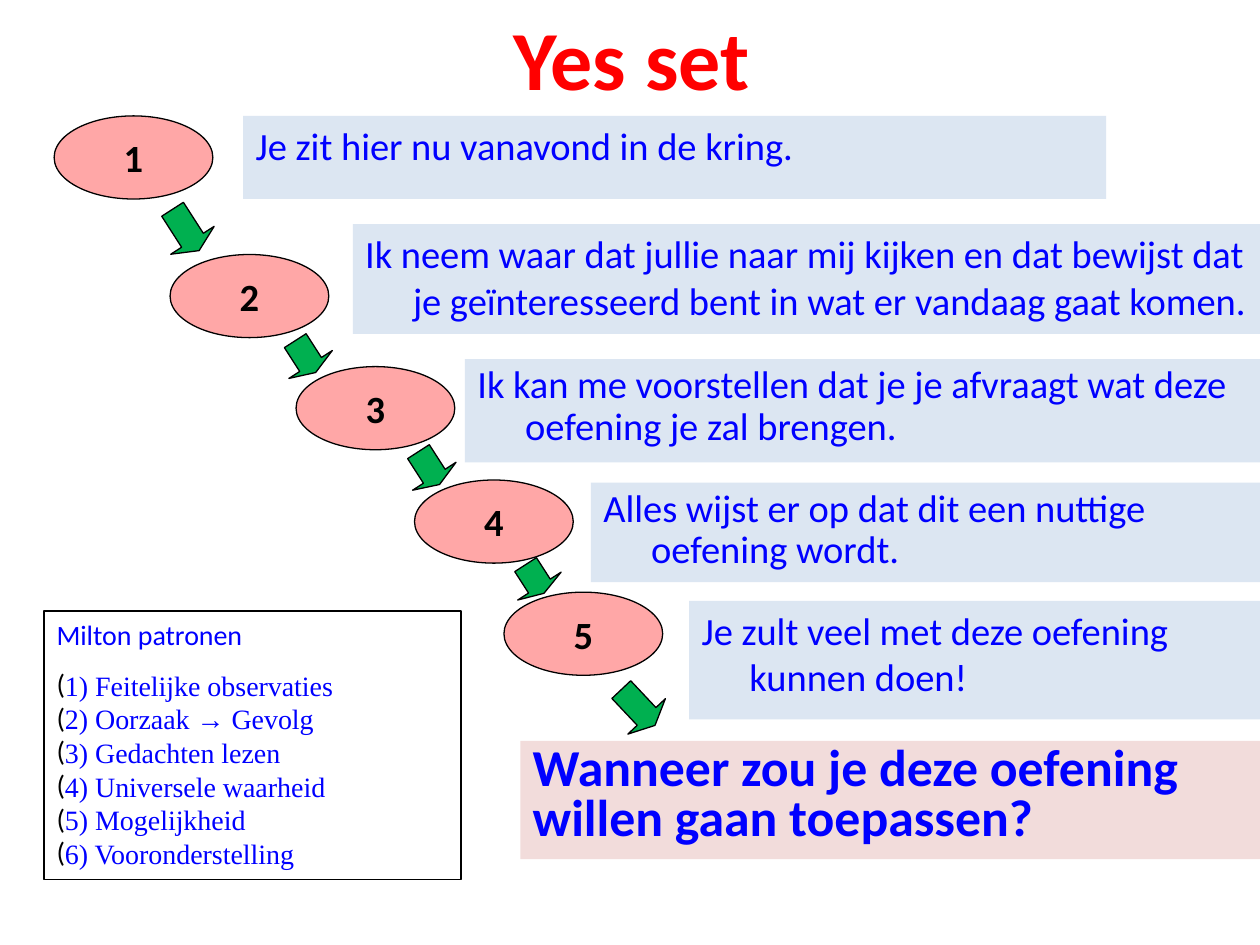
"""Build the "Yes set" slide: five numbered steps leading to a closing question."""
import pptx
import pptx.dml.color
import pptx.enum.shapes
import pptx.enum.text
import pptx.oxml.ns
import pptx.util
import lxml.etree
from pptx.util import Inches

COLORS = {
    "blue": "0000FF", "red": "FF0000", "black": "000000", "white": "FFFFFF",
    "pink": "FFA7A7", "green": "00B050", "pale_blue": "DCE6F2", "pale_red": "F2DCDB",
}
SHAPES = pptx.enum.shapes.MSO_SHAPE
ANCHOR = pptx.enum.text.MSO_ANCHOR
CENTER = pptx.enum.text.PP_ALIGN.CENTER


def add_box(kind, place, fill, outlined=False, turn=0):
    box = page.shapes.add_shape(kind, *[Inches(length) for length in place])
    box.shadow.inherit = False
    box.rotation = turn
    box.fill.solid()
    box.fill.fore_color.rgb = pptx.dml.color.RGBColor.from_string(COLORS[fill])
    if outlined:
        box.line.color.rgb = pptx.dml.color.RGBColor.from_string(COLORS["black"])
        box.line.width = pptx.util.Pt(0.75)
    else:
        box.line.fill.background()
    box.text_frame.word_wrap = True
    box.text_frame.vertical_anchor = ANCHOR.TOP
    return box


def write(para, text, size, color="blue", bold=False, font="Calibri", **layout):
    span = para.add_run()
    span.text = text
    formats = {"name": font, "size": pptx.util.Pt(size), "bold": bold}
    for name, value in formats.items():
        setattr(span.font, name, value)
    span.font.color.rgb = pptx.dml.color.RGBColor.from_string(COLORS[color])
    for name, value in ({"alignment": pptx.enum.text.PP_ALIGN.LEFT} | layout).items():
        setattr(para, name, value)


deck = pptx.Presentation()
deck.slide_width, deck.slide_height = Inches(10), Inches(7.5)
page = deck.slides.add_slide(deck.slide_layouts[6])

steps = [
    ((0.43, 0.92), (1.93, 0.92, 6.85, 0.66), 1.0, "Je zit hier nu vanavond in de kring."),
    ((1.35, 2.02), (2.8, 1.78, 7.2, 0.87), 1.0,
     "Ik neem waar dat jullie naar mij kijken en dat bewijst dat "
     "je geïnteresseerd bent in wat er vandaag gaat komen."),
    ((2.35, 2.91), (3.69, 2.85, 6.31, 0.82), 0.9,
     "Ik kan me voorstellen dat je je afvraagt wat deze oefening je zal brengen."),
    ((3.29, 3.81), (4.69, 3.83, 5.31, 0.79), 0.9,
     "Alles wijst er op dat dit een nuttige oefening wordt."),
    ((4, 4.7), (5.47, 4.77, 4.53, 0.94), 1.0,
     "Je zult veel met deze oefening kunnen doen!"),
]
for number, (corner, place, spacing, sentence) in enumerate(steps, 1):
    panel = add_box(SHAPES.RECTANGLE, place, "pale_blue")
    para = panel.text_frame.paragraphs[0]
    write(para, sentence, 22, line_spacing=spacing, space_before=pptx.util.Pt(4.4))
    properties = para._p.get_or_add_pPr()
    properties.set("marL", str(Inches(0.38)))
    properties.set("indent", str(-Inches(0.38)))
    oval = add_box(SHAPES.OVAL, (*corner, 1.26, 0.66), "pink", outlined=True)
    oval.text_frame.vertical_anchor = ANCHOR.MIDDLE
    write(oval.text_frame.paragraphs[0], str(number), 22, "black", True,
          alignment=CENTER, space_after=pptx.util.Pt(10))

arrows = [
    (1.27, 1.63, 0.39, 327.3), (2.22, 2.68, 0.3, 327.3), (3.2, 3.56, 0.31, 327.3),
    (4.04, 4.46, 0.27, 327.3), (4.86, 5.42, 0.39, 316.7),
]
for left, top, height, turn in arrows:
    arrow = add_box(SHAPES.DOWN_ARROW, (left, top, 0.41, height), "green", True, turn)
    arrow.adjustments[0], arrow.adjustments[1] = 0.5, 0.25

question = add_box(SHAPES.RECTANGLE, (4.13, 5.88, 5.87, 0.94), "pale_red")
write(question.text_frame.paragraphs[0], "Wanneer zou je deze oefening willen gaan toepassen?",
      29.6, bold=True, line_spacing=0.8, space_before=pptx.util.Pt(5.9))

title = page.shapes.add_textbox(Inches(3.98), Inches(0), Inches(2.09), Inches(0.91))
title.text_frame.word_wrap = False
write(title.text_frame.paragraphs[0], "Yes set", 48, "red", True)

legend = add_box(SHAPES.RECTANGLE, (0.35, 4.85, 3.31, 2.13), "white", outlined=True)
write(legend.text_frame.paragraphs[0], "Milton patronen", 16, space_after=pptx.util.Pt(10))
patterns = [
    "Feitelijke observaties", "Oorzaak → Gevolg", "Gedachten lezen",
    "Universele waarheid", "Mogelijkheid", "Vooronderstelling",
]
tag = pptx.oxml.ns.qn
for number, pattern in enumerate(patterns, 1):
    para = legend.text_frame.add_paragraph()
    write(para, f"{number}) {pattern}", 16, font="Times New Roman", level=1)
    properties = para._p.get_or_add_pPr()
    properties.set("marL", "0")
    properties.set("indent", "0")
    color = lxml.etree.SubElement(properties, tag("a:buClr"))
    lxml.etree.SubElement(color, tag("a:srgbClr"), val=COLORS["black"])
    lxml.etree.SubElement(properties, tag("a:buFont"), typeface="Calibri")
    lxml.etree.SubElement(properties, tag("a:buChar"), char="(")

deck.save("out.pptx")
